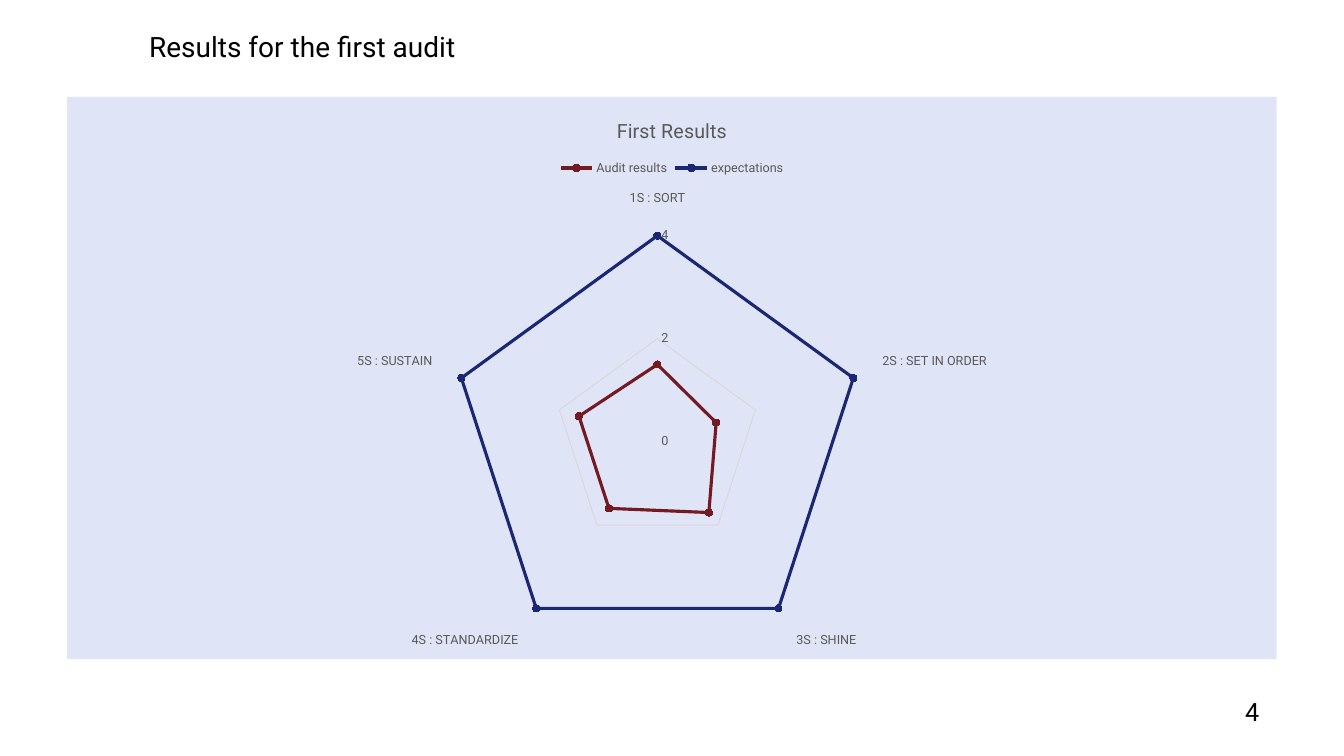
from dataclasses import dataclass
from lxml.etree import SubElement
from pptx import Presentation
from pptx.chart.data import CategoryChartData
from pptx.dml.color import RGBColor
from pptx.enum.chart import XL_CHART_TYPE, XL_LEGEND_POSITION, XL_MARKER_STYLE, XL_TICK_MARK
from pptx.enum.shapes import MSO_SHAPE
from pptx.enum.text import MSO_ANCHOR, PP_ALIGN
from pptx.oxml.ns import qn
from pptx.util import Inches, Pt


@dataclass(frozen=True)
class Theme:
    face: str = "Roboto"
    ink: str = "000000"
    grey: str = "595959"
    rule: str = "D9D9D9"
    panel: str = "C3CAF1"
    red: str = "731A22"
    blue: str = "1A2873"
    head: int = 20
    page: int = 18
    title: int = 14
    base: int = 10
    label: int = 9


THEME = Theme()
WIDE, HIGH = Inches(13.33), Inches(7.5)
FRAME = (0.05, 0.128, 0.9, 0.744)
HEAD = (0.1035, 0.037, 0.828, 0.063)
PAGE = (0.91, 0.899, 0.0435, 0.084)
STEPS = ["1S : SORT", "2S : SET IN ORDER", "3S : SHINE", "4S : STANDARDIZE", "5S : SUSTAIN"]
SCORES = [
    ("Audit results", [1.5, 1.2, 1.7, 1.6, 1.6], THEME.red),
    ("expectations", [4] * len(STEPS), THEME.blue),
]


def place(box):
    return [round(part * side) for part, side in zip(box, (WIDE, HIGH) * 2)]


def tint(color):
    return RGBColor.from_string(color)


def style(font, size, color):
    font.name = THEME.face
    font.size = Pt(size)
    font.bold = False
    font.color.rgb = tint(color)


def paint(fill, color):
    fill.solid()
    fill.fore_color.rgb = tint(color)


def draw(line, color, width):
    paint(line.fill, color)
    line.width = Pt(width)


def add_panel(slide, box):
    panel = slide.shapes.add_shape(MSO_SHAPE.RECTANGLE, *place(box))
    panel.shadow.inherit = False
    paint(panel.fill, THEME.panel)
    panel.line.fill.background()
    color = next(panel.fill._xPr.iter(qn("a:srgbClr")))
    SubElement(color, qn("a:alpha"), val="50000")


def add_text(slide, box, text, size, align, anchor, space):
    frame = slide.shapes.add_textbox(*place(box)).text_frame
    frame.word_wrap = True
    frame.vertical_anchor = anchor
    para = frame.paragraphs[0]
    para.alignment = align
    para.line_spacing = space
    run = para.add_run()
    run.text = text
    style(run.font, size, THEME.ink)


def set_axis(axis):
    axis.major_tick_mark = axis.minor_tick_mark = XL_TICK_MARK.NONE
    style(axis.tick_labels.font, THEME.label, THEME.grey)


def set_title(chart, text):
    chart.has_title = True
    run = chart.chart_title.text_frame.paragraphs[0].add_run()
    run.text = text
    style(run.font, THEME.title, THEME.grey)
    chart.chart_title.include_in_layout = False


def set_key(chart):
    chart.has_legend = True
    chart.legend.position = XL_LEGEND_POSITION.TOP
    chart.legend.include_in_layout = False
    style(chart.legend.font, THEME.label, THEME.grey)


def set_line(series, color):
    series.smooth = False
    draw(series.format.line, color, 2.25)
    mark = series.marker
    mark.style, mark.size = XL_MARKER_STYLE.CIRCLE, 5
    paint(mark.format.fill, color)
    draw(mark.format.line, color, 0.75)


def add_radar(slide, box):
    data = CategoryChartData()
    data.categories = STEPS
    for name, marks, _ in SCORES:
        data.add_series(name, marks)
    chart = slide.shapes.add_chart(XL_CHART_TYPE.RADAR_MARKERS, *place(box), data).chart
    style(chart.font, THEME.base, THEME.ink)
    set_title(chart, "First Results")
    set_key(chart)
    spokes, scale = chart.category_axis, chart.value_axis
    set_axis(spokes)
    spokes.has_major_gridlines = False
    draw(spokes.format.line, THEME.rule, 0.75)
    set_axis(scale)
    scale.minimum_scale, scale.maximum_scale, scale.major_unit = 0, 4, 2
    scale.has_major_gridlines = True
    draw(scale.major_gridlines.format.line, THEME.rule, 0.75)
    scale.format.line.fill.background()
    scale.tick_labels.number_format = "General"
    scale.tick_labels.number_format_is_linked = False
    chart.plots[0].vary_by_categories = False
    for series, (_, _, color) in zip(chart.plots[0].series, SCORES):
        set_line(series, color)


def main():
    deck = Presentation()
    deck.slide_width, deck.slide_height = WIDE, HIGH
    slide = deck.slides.add_slide(deck.slide_layouts[6])
    add_panel(slide, FRAME)
    add_text(slide, HEAD, "Results for the first audit", THEME.head, PP_ALIGN.LEFT, MSO_ANCHOR.TOP, 0.9)
    add_text(slide, PAGE, "4", THEME.page, PP_ALIGN.CENTER, MSO_ANCHOR.MIDDLE, 1.0)
    add_radar(slide, FRAME)
    deck.save("out.pptx")


if __name__ == "__main__":
    main()
